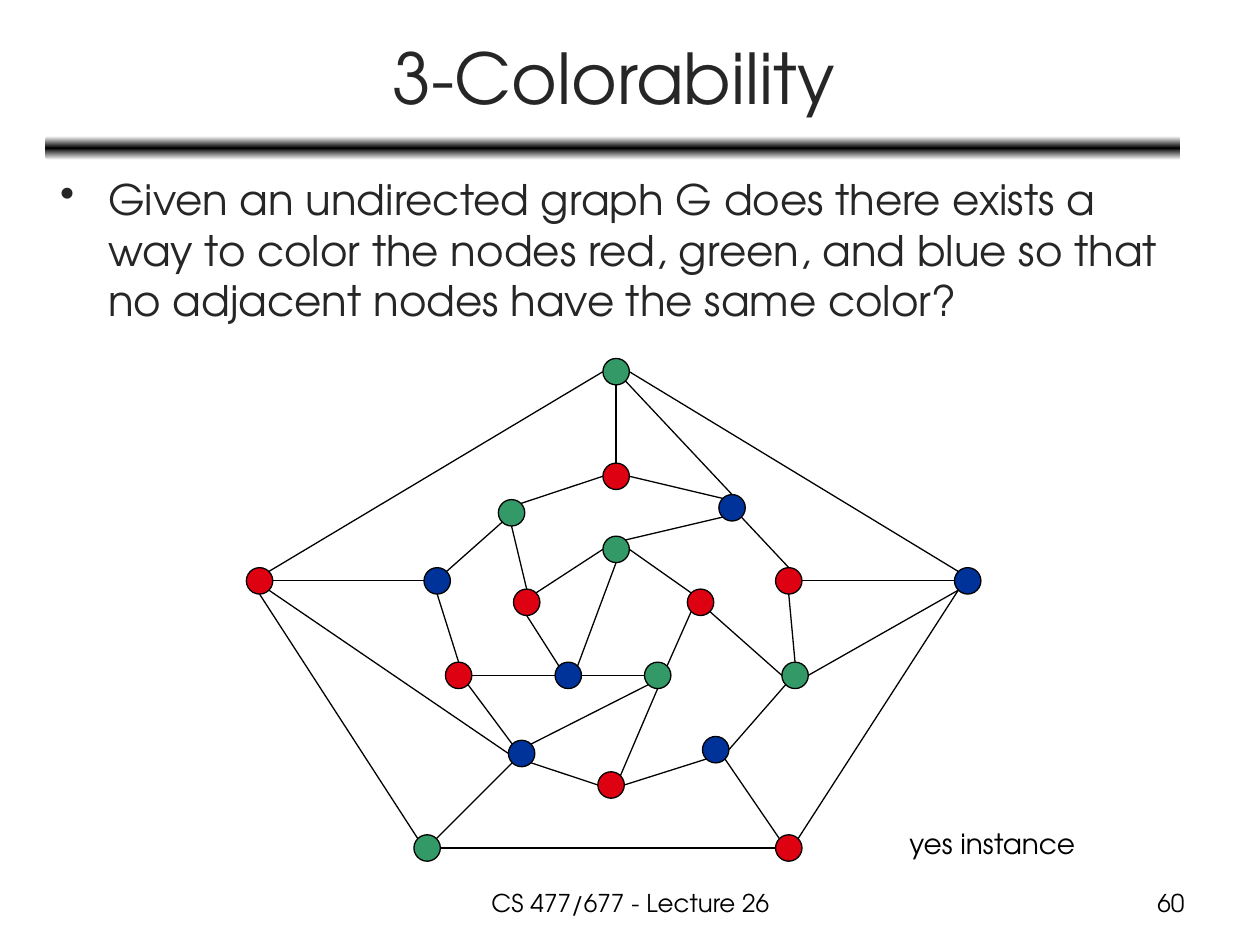
from dataclasses import dataclass
from math import sqrt

from lxml import etree
from pptx import Presentation
from pptx.dml.color import RGBColor
from pptx.enum.shapes import MSO_CONNECTOR, MSO_SHAPE
from pptx.enum.text import MSO_ANCHOR, PP_ALIGN
from pptx.oxml.ns import qn
from pptx.util import Inches, Pt

LINE, OVAL, BAR = MSO_CONNECTOR.STRAIGHT, MSO_SHAPE.OVAL, MSO_SHAPE.ROUNDED_RECTANGLE
LEFT, CENTER, RIGHT = PP_ALIGN.LEFT, PP_ALIGN.CENTER, PP_ALIGN.RIGHT
TOP, MIDDLE = MSO_ANCHOR.TOP, MSO_ANCHOR.MIDDLE

BLACK = RGBColor(0x00, 0x00, 0x00)
WHITE = RGBColor(0xFF, 0xFF, 0xFF)
INK = RGBColor(0x26, 0x26, 0x26)
RED = RGBColor(0xDD, 0x01, 0x11)
GREEN = RGBColor(0x33, 0x99, 0x66)
BLUE = RGBColor(0x00, 0x33, 0x99)

FONT = "TeX Gyre Adventor"
COLS, ROWS = 100, 75  # grid of square cells over the slide
CELL = Inches(0.1)
RADIUS = 1.05  # node radius in cells
DIAG = sqrt(0.5)
COMPASS = {
    "N": (0, -1), "NE": (DIAG, -DIAG), "E": (1, 0), "SE": (DIAG, DIAG),
    "S": (0, 1), "SW": (-DIAG, DIAG), "W": (-1, 0), "NW": (-DIAG, -DIAG),
}


@dataclass
class Node:
    col: float
    row: float
    color: RGBColor


@dataclass
class Label:
    text: str
    box: tuple[float, float, float, float]
    size: int
    color: RGBColor = BLACK
    align: PP_ALIGN = LEFT
    anchor: MSO_ANCHOR = TOP
    before: float = 0
    bullet: bool = False


# Nodes by ring (O outer, M middle, I inner), clockwise from the top
NODES = {
    "O0": Node(48.9, 29.5, GREEN),
    "O1": Node(76.8, 46.1, BLUE),
    "O2": Node(62.6, 67.3, RED),
    "O3": Node(33.9, 67.3, GREEN),
    "O4": Node(20.6, 46.1, RED),
    "M0": Node(48.9, 37.8, RED),
    "M1": Node(58.1, 40.3, BLUE),
    "M2": Node(62.6, 46.1, RED),
    "M3": Node(63.1, 53.6, GREEN),
    "M4": Node(56.8, 59.5, BLUE),
    "M5": Node(48.5, 62.3, RED),
    "M6": Node(41.4, 59.8, BLUE),
    "M7": Node(36.4, 53.6, RED),
    "M8": Node(34.7, 46.1, BLUE),
    "M9": Node(40.6, 40.7, GREEN),
    "I0": Node(48.9, 43.6, GREEN),
    "I1": Node(55.6, 47.8, RED),
    "I2": Node(52.2, 53.6, GREEN),
    "I3": Node(45.1, 53.6, BLUE),
    "I4": Node(41.8, 47.8, RED),
}

# Each edge: node and side it leaves, node and side it reaches
EDGES = [
    # outer ring
    "O0 E O1 NW", "O1 SW O2 NE", "O2 W O3 E", "O3 NW O4 S", "O4 NE O0 W",
    # middle ring
    "M0 E M1 NW", "M1 SE M2 N", "M2 S M3 N", "M3 SW M4 E", "M4 SW M5 E",
    "M5 W M6 SE", "M6 NW M7 SE", "M7 N M8 S", "M8 NE M9 SW", "M9 NE M0 W",
    # inner ring
    "I0 E I1 NW", "I1 SW I2 NE", "I2 W I3 E", "I3 NW I4 S", "I4 NE I0 W",
    # outer to middle
    "O0 S M0 N", "O0 SE M1 N", "O1 W M2 E", "O1 SW M3 E", "O2 NW M4 SE",
    "O3 NE M6 SW", "O4 SE M6 W", "O4 E M8 W",
    # middle to inner
    "M1 SW I0 NE", "M3 W I1 SE", "M5 NE I2 S", "M6 NE I2 SW", "M7 E I3 W",
    "M9 S I4 N",
    # across the inner ring
    "I0 S I3 NE",
]

LABELS = [
    Label("3-Colorability", (3.7, 1.1, 90, 9.9), 40, INK, CENTER, MIDDLE),
    Label("Given an undirected graph G does there exists a way to color the "
          "nodes red, green, and blue so that no adjacent nodes have the same "
          "color?", (3.8, 13.3, 90, 55.5), 24, INK, before=4.8, bullet=True),
    Label("yes instance", (71.2, 65.1, 17.3, 3.7), 16, before=8),
    Label("CS 477/677 - Lecture 26", (34.2, 70, 31.7, 3.5), 14, align=CENTER),
    Label("60", (71.7, 70, 23.3, 3.5), 14, align=RIGHT),
]


def cells(*values: float) -> list[int]:
    return [round(v * CELL) for v in values]


def add_rule(s) -> None:
    bar = s.shapes.add_shape(BAR, *cells(3.6, 10.8, 90.1, 1.9))
    bar.shadow.inherit = False
    bar.line.fill.background()
    bar.fill.gradient()
    bar.fill.gradient_angle = 90
    stops = bar.fill.gradient_stops
    for stop, color in zip(stops, (WHITE, WHITE)):
        stop.color.rgb = color
    # third stop: black in the middle
    gs_list = bar.fill._fill._gradFill.find(qn("a:gsLst"))
    middle = etree.Element(qn("a:gs"), pos="50000")
    etree.SubElement(middle, qn("a:srgbClr"), val=str(BLACK))
    gs_list.insert(1, middle)


def add_label(s, label: Label) -> None:
    tf = s.shapes.add_textbox(*cells(*label.box)).text_frame
    tf.word_wrap = True
    tf.vertical_anchor = label.anchor
    p = tf.paragraphs[0]
    p.alignment = label.align
    p.space_before = Pt(label.before)
    if label.bullet:
        pPr = p._p.get_or_add_pPr()
        pPr.set("marL", str(Inches(0.38)))
        pPr.set("indent", str(-Inches(0.38)))
        etree.SubElement(pPr, qn("a:buChar"), char="•")
    r = p.add_run()
    r.text = label.text
    r.font.name = FONT
    r.font.size = Pt(label.size)
    r.font.color.rgb = label.color


def site(name: str, side: str) -> list[int]:
    node, (dx, dy) = NODES[name], COMPASS[side]
    return cells(node.col + dx * RADIUS, node.row + dy * RADIUS)


def add_edge(s, edge: str) -> None:
    start, start_side, end, end_side = edge.split()
    line = s.shapes.add_connector(LINE, *site(start, start_side), *site(end, end_side))
    line.line.color.rgb = BLACK
    line.line.width = Pt(0.75)
    etree.SubElement(line._element.spPr, qn("a:effectLst"))


def add_node(s, node: Node) -> None:
    box = cells(node.col - RADIUS, node.row - RADIUS, 2 * RADIUS, 2 * RADIUS)
    sp = s.shapes.add_shape(OVAL, *box)
    sp.shadow.inherit = False
    sp.fill.solid()
    sp.fill.fore_color.rgb = node.color
    sp.line.color.rgb = BLACK
    sp.line.width = Pt(0.75)


def main() -> None:
    prs = Presentation()
    prs.slide_width, prs.slide_height = cells(COLS, ROWS)
    s = prs.slides.add_slide(prs.slide_layouts[6])
    add_rule(s)
    # graph: edges lie behind the nodes
    for edge in EDGES:
        add_edge(s, edge)
    for node in NODES.values():
        add_node(s, node)
    for label in LABELS:
        add_label(s, label)
    prs.save("out.pptx")


if __name__ == "__main__":
    main()
